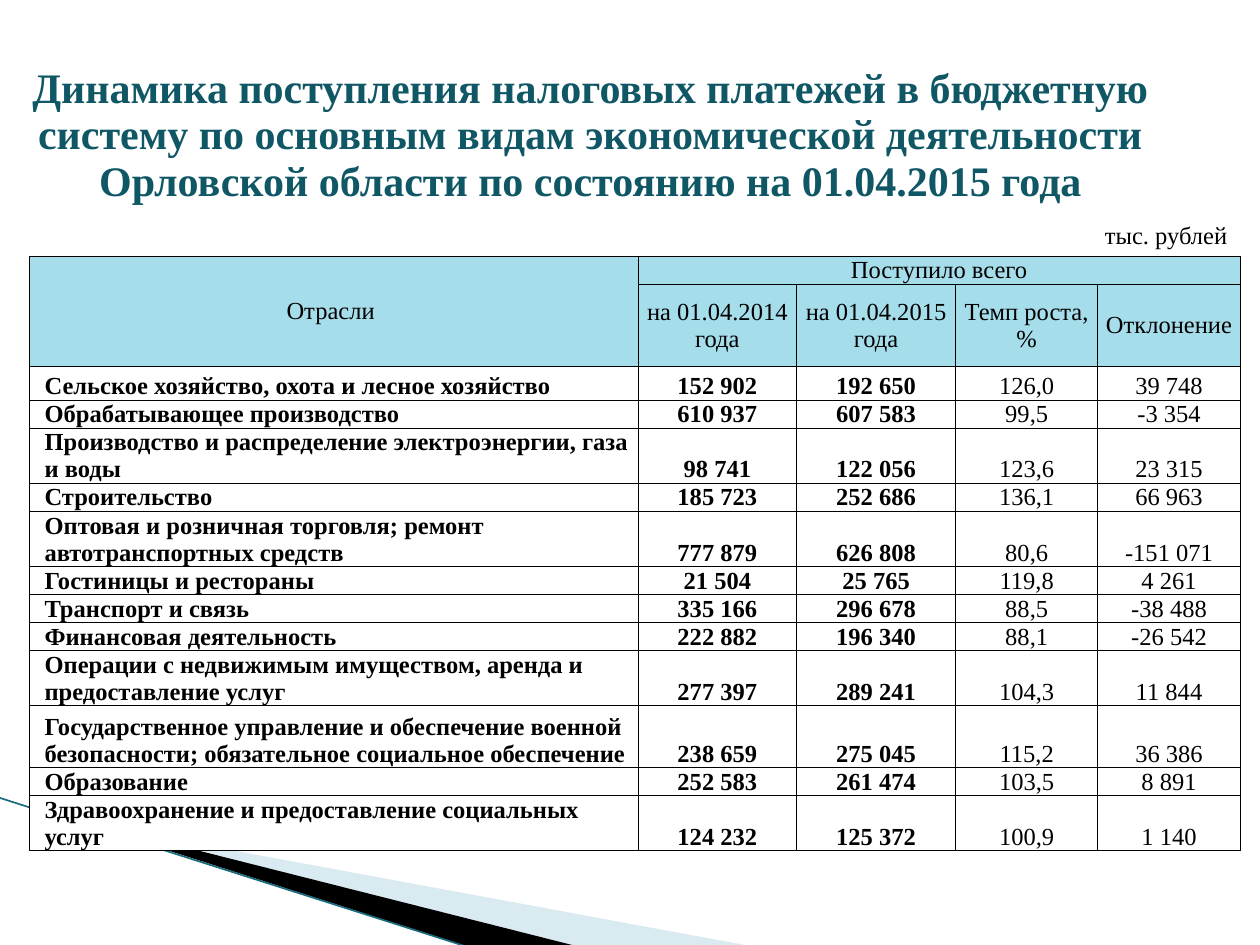
from collections import namedtuple

from lxml import etree
from pptx import Presentation
from pptx import util as u
from pptx.dml.color import RGBColor
from pptx.enum import text
from pptx.oxml import parse_xml
from pptx.oxml.ns import nsdecls, qn

Box = namedtuple("Box", "left top width height")
SLIDE = Box(0, 0, u.Inches(10), u.Inches(7.5))
FONT = "Times New Roman"
COLORS = {"title": "105766", "text": "000000", "header": "A6DDEA", "paper": "FFFFFF",
          "border": "000000", "pale": "A0CBDC", "dark": "000000", "edge": "196B7D"}

TITLE = ("Динамика поступления налоговых платежей в бюджетную систему по основным "
         "видам экономической деятельности Орловской области по состоянию на 01.04.2015 года")
PERIODS = ["на 01.04.2014 года", "на 01.04.2015 года", "Темп роста, %", "Отклонение"]
# Row height in text lines, then the row's values
INDUSTRIES = [
    (1.23, "Сельское хозяйство, охота и лесное хозяйство", "152 902", "192 650", "126,0", "39 748"),
    (1, "Обрабатывающее производство", "610 937", "607 583", "99,5", "-3 354"),
    (2, "Производство и распределение электроэнергии, газа и воды",
     "98 741", "122 056", "123,6", "23 315"),
    (1, "Строительство", "185 723", "252 686", "136,1", "66 963"),
    (2, "Оптовая и розничная торговля; ремонт автотранспортных средств",
     "777 879", "626 808", "80,6", "-151 071"),
    (1, "Гостиницы и рестораны", "21 504", "25 765", "119,8", "4 261"),
    (1, "Транспорт и связь", "335 166", "296 678", "88,5", "-38 488"),
    (1, "Финансовая деятельность", "222 882", "196 340", "88,1", "-26 542"),
    (2, "Операции с недвижимым имуществом, аренда и предоставление услуг",
     "277 397", "289 241", "104,3", "11 844"),
    (2.23, "Государственное управление и обеспечение военной безопасности; "
     "обязательное социальное обеспечение", "238 659", "275 045", "115,2", "36 386"),
    (1, "Образование", "252 583", "261 474", "103,5", "8 891"),
    (2, "Здравоохранение и предоставление социальных услуг",
     "124 232", "125 372", "100,9", "1 140"),
]
HEADER_LINES = [1, 2.96]
OPAQUE_ROWS = 3  # last rows, whose names cover the corner ornament
COLUMN_SHARES = [50.26, 13.11, 13.11, 11.76, 11.76]


def color(name):
    return RGBColor.from_string(COLORS[name])


def point(box, x, y):
    """Position at x and y per cent of the box."""
    return round(box.left + box.width * x / 100), round(box.top + box.height * y / 100)


def part(box, x, y, width, height):
    """Box inside a box, in per cent of it."""
    return Box(*point(box, x, y), round(box.width * width / 100), round(box.height * height / 100))


def write(paragraph, words, size, ink="text", bold=False):
    run = paragraph.add_run()
    run.text = words
    run.font.name, run.font.size, run.font.bold = FONT, u.Pt(size), bold
    run.font.color.rgb = color(ink)


def set_borders(cell, width=None):
    properties = cell._tc.get_or_add_tcPr()
    for side in ("lnL", "lnR", "lnT", "lnB"):
        if width:
            line = (f'<a:{side} {nsdecls("a")} w="{u.Pt(width)}"><a:solidFill>'
                    f'<a:srgbClr val="{COLORS["border"]}"/></a:solidFill></a:{side}>')
        else:
            line = f'<a:{side} {nsdecls("a")} w="0"><a:noFill/></a:{side}>'
        properties.append(parse_xml(line))


def fill_cell(cell, words, size=14, ink="text", bold=False, fill=None, border=0.5,
              anchor=text.MSO_ANCHOR.BOTTOM, align=text.PP_ALIGN.CENTER, indent=0.01):
    set_borders(cell, border)
    if fill:
        cell.fill.solid()
        cell.fill.fore_color.rgb = color(fill)
    else:
        cell.fill.background()
    cell.margin_left, cell.margin_right = u.Inches(indent), u.Inches(0.01)
    cell.margin_top, cell.margin_bottom = u.Pt(0.5), 0
    cell.vertical_anchor = anchor
    paragraph = cell.text_frame.paragraphs[0]
    paragraph.alignment = align
    if words:
        write(paragraph, words, size, ink, bold)


def add_plain_table(slide, box, rows, columns):
    table = slide.shapes.add_table(rows, columns, *box).table
    table.first_row = table.horz_banding = False
    return table


def reframe(shape, frame):
    """Give a freeform another frame while its outline stays in place."""
    outline = shape._element.spPr.find(".//" + qn("a:path"))
    for corner in outline.iter(qn("a:pt")):
        corner.set("x", str(int(corner.get("x")) + shape.left - frame.left))
        corner.set("y", str(int(corner.get("y")) + shape.top - frame.top))
    outline.set("w", str(frame.width))
    outline.set("h", str(frame.height))
    shape.left, shape.top, shape.width, shape.height = frame


def add_ornament(slide, box):
    wedges = [("pale", 40, (7.8, 72.93, 41.6, 21.07),
               [(5.5, 86.8), (59.5, 100.1), (45.6, 100.1), (5.5, 86.7)]),
              ("dark", 100, (-0.6, 84.4, 41.6, 12.27),
               [(5.3, 86.5), (45.7, 100.1), (37.2, 100.2), (5.4, 86.6)])]
    for name, opacity, frame, corners in wedges:
        first, *others = [point(box, *corner) for corner in corners]
        builder = slide.shapes.build_freeform(*first)
        builder.add_line_segments(others)
        wedge = builder.convert_to_shape()
        reframe(wedge, part(box, *frame))
        wedge.shadow.inherit = False
        wedge.fill.solid()
        wedge.fill.fore_color.rgb = color(name)
        wedge.line.fill.background()
        if opacity < 100:
            tint = wedge._element.spPr.find(".//" + qn("a:srgbClr"))
            etree.SubElement(tint, qn("a:alpha")).set("val", str(opacity * 1000))
    edge = slide.shapes.add_connector(1, *point(box, -0.1, 84.4), *point(box, 37.1, 100.2))
    edge.line.color.rgb = color("edge")
    edge.line.width = u.Pt(0.95)
    etree.SubElement(edge._element.spPr, qn("a:effectLst"))


def add_title(slide, box):
    heading = add_plain_table(slide, box, 1, 1)
    fill_cell(heading.cell(0, 0), TITLE, 24, "title", bold=True, border=None)


def add_unit(slide, box):
    unit = slide.shapes.add_textbox(*box).text_frame
    unit.word_wrap = True
    write(unit.paragraphs[0], "тыс. рублей", 14)


def add_industries(slide, box):
    lines = HEADER_LINES + [industry[0] for industry in INDUSTRIES]
    table = add_plain_table(slide, box, len(lines), len(COLUMN_SHARES))
    for column, share in zip(table.columns, COLUMN_SHARES):
        column.width = round(box.width * share / 100)
    for row, count in zip(table.rows, lines):
        row.height = round(box.height * count / sum(lines))

    # Two-level header
    header = [["Отрасли\u00a0", "Поступило всего", "", "", ""], ["", *PERIODS]]
    for r, labels in enumerate(header):
        for c, label in enumerate(labels):
            fill_cell(table.cell(r, c), label, fill="header", anchor=text.MSO_ANCHOR.MIDDLE)
    table.cell(0, 0).merge(table.cell(1, 0))
    table.cell(0, 1).merge(table.cell(0, 4))

    # One row per industry
    for i, (_, industry, *values) in enumerate(INDUSTRIES):
        r = i + len(HEADER_LINES)
        opaque = i >= len(INDUSTRIES) - OPAQUE_ROWS
        fill_cell(table.cell(r, 0), industry, bold=True, fill="paper" if opaque else None,
                  align=text.PP_ALIGN.LEFT, indent=0.12)
        for c, value in enumerate(values, 1):
            fill_cell(table.cell(r, c), value, bold=c <= 2)


def main():
    deck = Presentation()
    deck.slide_width, deck.slide_height = SLIDE.width, SLIDE.height
    slide = deck.slides.add_slide(deck.slide_layouts[6])
    slide.background.fill.solid()
    slide.background.fill.fore_color.rgb = color("paper")
    add_ornament(slide, SLIDE)
    add_title(slide, part(SLIDE, -1.6, 6.9, 96.9, 10.8))
    add_industries(slide, part(SLIDE, 2.34, 27.1, 96.1, 62.7))
    add_unit(slide, part(SLIDE, 86.7, 22.6, 12.5, 4.53))
    deck.save("out.pptx")


if __name__ == "__main__":
    main()
